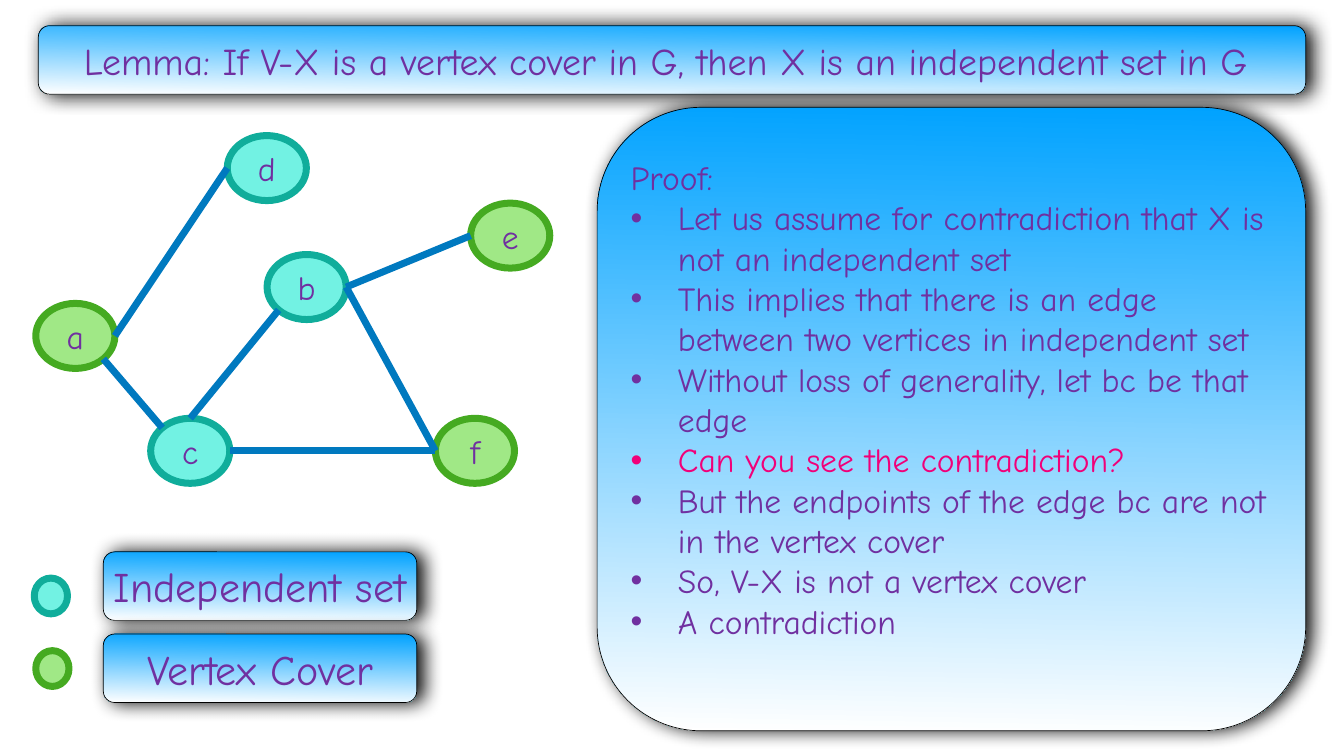
from dataclasses import dataclass
from math import cos, radians, sin
from typing import NamedTuple

from lxml import etree
from pptx import Presentation, util as u
from pptx.dml.color import RGBColor
from pptx.enum import shapes, text
from pptx.oxml import ns


@dataclass(frozen=True)
class Theme:
    font: str = "Comic Neue"
    ink: str = "7030A0"
    alert: str = "F10079"
    edge: str = "0079BF"
    top: str = "00A2FF"
    base: str = "FFFFFF"
    rim: str = "000000"
    title: int = 54
    label: int = 60
    body: int = 48
    thick: int = 10
    thin: int = 1
    inset: float = 0.06


class Kind(NamedTuple):
    fill: str
    line: str


class Box(NamedTuple):
    x: float
    y: float
    w: float
    h: float


class Node(NamedTuple):
    name: str
    x: float
    y: float
    kind: Kind


class Edge(NamedTuple):
    start: str
    turn: int
    end: str
    back: int


class Line(NamedTuple):
    words: str
    color: str
    dot: bool = True


class Card(NamedTuple):
    box: Box
    words: str
    size: int


THEME = Theme()
COVER = Kind("A0E886", "45AA21")
FREE = Kind("72F2E3", "10AD9B")
WIDE, HIGH = 1.57, 1.29
HANG = 0.94
ROW = 0.8

NODES = [
    Node("a", 0.71, 6.02, COVER),
    Node("d", 4.51, 2.69, FREE),
    Node("b", 5.3, 5.05, FREE),
    Node("c", 2.99, 8.3, FREE),
    Node("e", 9.34, 4.03, COVER),
    Node("f", 8.64, 8.3, COVER),
]
EDGES = [
    Edge("d", 180, "a", 0),
    Edge("c", 225, "a", 45),
    Edge("e", 180, "b", 0),
    Edge("f", 180, "b", 0),
    Edge("f", 180, "c", 0),
    Edge("b", 135, "c", 270),
]
CARDS = [
    Card(Box(0.76, 0.51, 25.15, 1.36),
         "Lemma: If V-X is a vertex cover in G, then X is an independent set in G ",
         THEME.title),
    Card(Box(2.05, 10.95, 6.22, 1.36), "Independent set", THEME.label),
    Card(Box(2.05, 12.58, 6.22, 1.36), "Vertex Cover", THEME.label),
]
KEYS = [(Box(0.68, 11.47, 0.66, 0.71), FREE), (Box(0.71, 12.91, 0.66, 0.71), COVER)]
PROOF = [
    Line("Proof:", THEME.ink, False),
    Line("Let us assume for contradiction that X is not an independent set", THEME.ink),
    Line("This implies that there is an edge between two vertices in independent set",
         THEME.ink),
    Line("Without loss of generality, let bc be that edge", THEME.ink),
    Line("Can you see the contradiction?", THEME.alert),
    Line("But the endpoints of the edge bc are not in the vertex cover", THEME.ink),
    Line("So, V-X is not a vertex cover", THEME.ink),
    Line("A contradiction", THEME.ink),
]


def tint(code: str) -> RGBColor:
    return RGBColor.from_string(code)


def add_shape(slide, form, box: Box, line: str, width: int):
    shape = slide.shapes.add_shape(form, *map(u.Inches, box))
    shape.shadow.inherit = False
    shape.line.color.rgb = tint(line)
    shape.line.width = u.Pt(width)
    frame = shape.text_frame
    frame.word_wrap = True
    frame.vertical_anchor = text.MSO_ANCHOR.MIDDLE
    frame.margin_left = frame.margin_right = u.Inches(THEME.inset)
    frame.margin_top = frame.margin_bottom = u.Inches(THEME.inset)
    return shape


def add_run(para, words: str, size: int, color: str = THEME.ink) -> None:
    run = para.add_run()
    run.text = words
    run.font.name = THEME.font
    run.font.size = u.Pt(size)
    run.font.color.rgb = tint(color)


def add_text(shape, words: str, size: int) -> None:
    para = shape.text_frame.paragraphs[0]
    para.alignment = text.PP_ALIGN.CENTER
    add_run(para, words, size)


def add_disc(slide, box: Box, kind: Kind):
    disc = add_shape(slide, shapes.MSO_SHAPE.OVAL, box, kind.line, THEME.thick)
    disc.fill.solid()
    disc.fill.fore_color.rgb = tint(kind.fill)
    return disc


def add_panel(slide, box: Box):
    panel = add_shape(slide, shapes.MSO_SHAPE.ROUNDED_RECTANGLE, box,
                      THEME.rim, THEME.thin)
    panel.fill.gradient()
    panel.fill.gradient_angle = 360 - 91
    for stop, code in zip(panel.fill.gradient_stops, (THEME.top, THEME.base)):
        stop.color.rgb = tint(code)
    glow = etree.SubElement(
        panel._element.spPr.find(ns.qn("a:effectLst")), ns.qn("a:outerShdw"),
        blurRad=str(u.Pt(28)), dist=str(u.Pt(9)), dir="0", rotWithShape="0")
    shade = etree.SubElement(glow, ns.qn("a:srgbClr"), val=THEME.rim)
    etree.SubElement(shade, ns.qn("a:alpha"), val="97000")
    return panel


def rim_point(node: Node, turn: int) -> tuple[u.Length, u.Length]:
    angle = radians(turn)
    return (u.Inches(node.x + WIDE / 2 * (1 + cos(angle))),
            u.Inches(node.y + HIGH / 2 * (1 + sin(angle))))


def add_edge(slide, edge: Edge, nodes: dict[str, Node]) -> None:
    link = slide.shapes.add_connector(
        shapes.MSO_CONNECTOR.STRAIGHT,
        *rim_point(nodes[edge.start], edge.turn),
        *rim_point(nodes[edge.end], edge.back))
    link.line.color.rgb = tint(THEME.edge)
    link.line.width = u.Pt(THEME.thick)
    etree.SubElement(link._element.spPr, ns.qn("a:effectLst"))


def add_proof(slide) -> None:
    frame = add_panel(slide, Box(11.85, 2.13, 14.06, 12.37)).text_frame
    frame.margin_bottom = u.Inches(THEME.inset + ROW)
    for i, line in enumerate(PROOF):
        para = frame.add_paragraph() if i else frame.paragraphs[0]
        para.alignment = text.PP_ALIGN.LEFT
        if line.dot:
            props = para._p.get_or_add_pPr()
            props.set("marL", str(u.Inches(HANG)))
            props.set("indent", str(u.Inches(-HANG)))
            etree.SubElement(props, ns.qn("a:buFont"), typeface="Arial")
            etree.SubElement(props, ns.qn("a:buChar"), char="•")
        add_run(para, line.words, THEME.body, line.color)


def main() -> None:
    deck = Presentation()
    deck.slide_width, deck.slide_height = u.Inches(26.67), u.Inches(15)
    slide = deck.slides.add_slide(deck.slide_layouts[6])
    for card in CARDS:
        add_text(add_panel(slide, card.box), card.words, card.size)
    add_proof(slide)
    for node in NODES:
        disc = add_disc(slide, Box(node.x, node.y, WIDE, HIGH), node.kind)
        add_text(disc, node.name, THEME.body)
    nodes = {node.name: node for node in NODES}
    for edge in EDGES:
        add_edge(slide, edge, nodes)
    for box, kind in KEYS:
        add_disc(slide, box, kind)
    deck.save("out.pptx")


if __name__ == "__main__":
    main()
